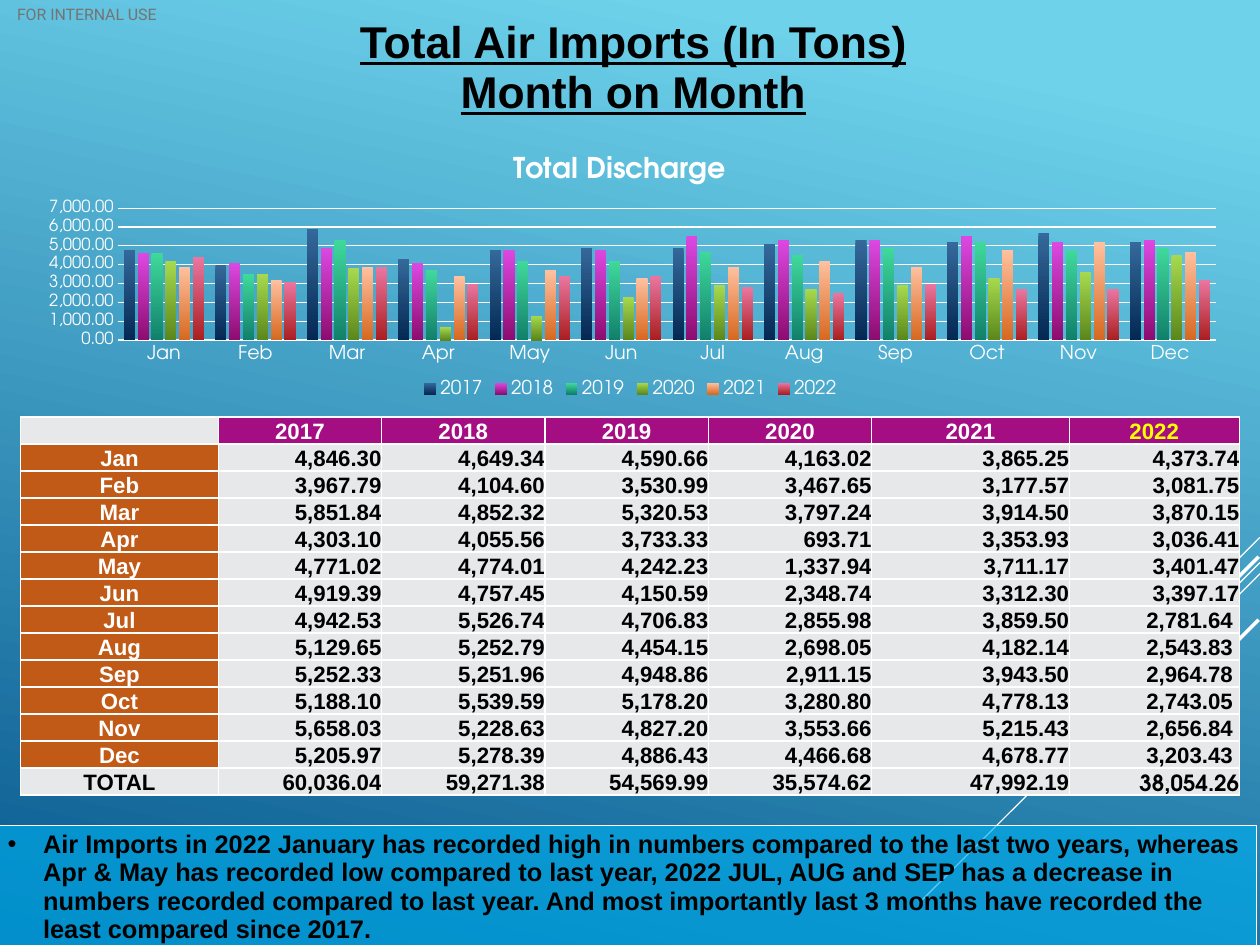
from dataclasses import dataclass
from typing import Any

from lxml.etree import SubElement
from pptx import Presentation
from pptx.chart.data import CategoryChartData
from pptx.dml.color import RGBColor
from pptx.enum.chart import XL_CHART_TYPE, XL_LEGEND_POSITION, XL_TICK_MARK
from pptx.enum.shapes import MSO_CONNECTOR, MSO_SHAPE
from pptx.enum.text import MSO_ANCHOR, MSO_AUTO_SIZE, PP_ALIGN
from pptx.oxml.ns import qn
from pptx.util import Cm, Pt

WHITE, BLACK, GREY = "FFFFFF", "000000", "E7E8EA"
MAGENTA, ORANGE, YELLOW = "A50E82", "C15A16", "FFFF00"
ADVENTOR = "TeX Gyre Adventor"
LEFT, WIDTH = 0.46, 27.1  # shared by the chart and the table
COLUMN_WIDTHS = (4.39, 3.63, 3.63, 3.63, 3.63, 4.39, 3.78)
ROW_HEIGHT = 0.6
NO_MARGINS = dict.fromkeys(("margin_left", "margin_top", "margin_right", "margin_bottom"), 0)


@dataclass(frozen=True)
class TextStyle:
    size: float
    color: str = BLACK
    name: str = "Arial"
    bold: bool = True
    underline: bool = False
    align: Any = PP_ALIGN.CENTER


@dataclass(frozen=True)
class Ray:
    x1: float
    y1: float
    x2: float
    y2: float
    weight: float


@dataclass(frozen=True)
class Year:
    name: str
    top: str
    bottom: str


RAYS = (
    Ray(28, 11.94, 25.68, 14.25, 0.75),
    Ray(28, 12.5, 20.42, 20.07, 0.75),
    Ray(28, 12.75, 23.19, 17.55, 0.75),
    Ray(27.97, 12.37, 23.57, 16.79, 2.25),
    Ray(27.97, 13.77, 24.77, 16.97, 2.25),
)
YEARS = (
    Year("2017", "35699B", "042853"),
    Year("2018", "DC48E1", "8D0C6F"),
    Year("2019", "3FD99B", "11806A"),
    Year("2020", "A6D94E", "5B871B"),
    Year("2021", "FFC1A0", "D7681F"),
    Year("2022", "EA76A0", "AA1E1F"),
)
TONS = {
    "Jan": ("4,846.30", "4,649.34", "4,590.66", "4,163.02", "3,865.25", "4,373.74"),
    "Feb": ("3,967.79", "4,104.60", "3,530.99", "3,467.65", "3,177.57", "3,081.75"),
    "Mar": ("5,851.84", "4,852.32", "5,320.53", "3,797.24", "3,914.50", "3,870.15"),
    "Apr": ("4,303.10", "4,055.56", "3,733.33", "693.71", "3,353.93", "3,036.41"),
    "May": ("4,771.02", "4,774.01", "4,242.23", "1,337.94", "3,711.17", "3,401.47"),
    "Jun": ("4,919.39", "4,757.45", "4,150.59", "2,348.74", "3,312.30", "3,397.17"),
    "Jul": ("4,942.53", "5,526.74", "4,706.83", "2,855.98", "3,859.50", "2,781.64"),
    "Aug": ("5,129.65", "5,252.79", "4,454.15", "2,698.05", "4,182.14", "2,543.83"),
    "Sep": ("5,252.33", "5,251.96", "4,948.86", "2,911.15", "3,943.50", "2,964.78"),
    "Oct": ("5,188.10", "5,539.59", "5,178.20", "3,280.80", "4,778.13", "2,743.05"),
    "Nov": ("5,658.03", "5,228.63", "4,827.20", "3,553.66", "5,215.43", "2,656.84"),
    "Dec": ("5,205.97", "5,278.39", "4,886.43", "4,466.68", "4,678.77", "3,203.43"),
}
TOTALS = ("60,036.04", "59,271.38", "54,569.99", "35,574.62", "47,992.19", "38,054.26")
INDENTED_MONTHS = ("Jul", "Aug", "Sep", "Oct", "Nov", "Dec")
FINDINGS = (
    "Air Imports in 2022 January has recorded high in numbers compared to the last two years, "
    "whereas Apr & May has recorded low compared to last year, 2022 JUL, AUG and SEP has a "
    "decrease in numbers recorded compared to last year. And most importantly last 3 months "
    "have recorded the least compared since 2017."
)


def rgb(value: str) -> RGBColor:
    return RGBColor.from_string(value)


def apply(target: Any, values: dict[str, Any]) -> None:
    for key, value in values.items():
        setattr(target, key, value)


def set_font(font: Any, style: TextStyle) -> None:
    apply(font, {"size": Pt(style.size), "name": style.name,
                 "bold": style.bold, "underline": style.underline})
    font.color.rgb = rgb(style.color)


def write(paragraph: Any, text: str, style: TextStyle) -> None:
    apply(paragraph, {"alignment": style.align, "line_spacing": 0.93})
    run = paragraph.add_run()
    run.text = text
    set_font(run.font, style)


def set_solid(fill: Any, color: str) -> None:
    fill.solid()
    fill.fore_color.rgb = rgb(color)


def set_line(line: Any, color: str, weight: float) -> None:
    set_solid(line.fill, color)
    line.width = Pt(weight)


def set_gradient(fill: Any, start: str, end: str, angle: float, offset: float = 0) -> None:
    fill.gradient()
    fill.gradient_angle = 360 - angle
    for stop, color, position in zip(fill.gradient_stops, (start, end), (offset, 1)):
        stop.color.rgb = rgb(color)
        stop.position = position


def place_in_chart(part: Any, index: int, **fractions: float) -> None:
    for old in part.findall(qn("c:layout")):
        part.remove(old)
    layout = SubElement(part, qn("c:layout"))
    part.insert(index, layout)
    manual = SubElement(layout, qn("c:manualLayout"))
    if "w" in fractions:
        SubElement(manual, qn("c:layoutTarget"), val="inner")
    for axis in "xy":
        SubElement(manual, qn(f"c:{axis}Mode"), val="edge")
    for key, value in fractions.items():
        SubElement(manual, qn(f"c:{key}"), val=str(value))


def draw_ray(slide: Any, ray: Ray) -> None:
    line = slide.shapes.add_connector(
        MSO_CONNECTOR.STRAIGHT, Cm(ray.x1), Cm(ray.y1), Cm(ray.x2), Cm(ray.y2))
    set_line(line.line, WHITE, ray.weight)
    SubElement(line.element.spPr, qn("a:effectLst"))


def draw_title(slide: Any) -> None:
    title = slide.shapes.title
    apply(title, {"left": Cm(1.47), "top": Cm(0.64), "width": Cm(25.2), "height": Cm(1.7)})
    frame = title.text_frame
    apply(frame, NO_MARGINS | {"margin_top": Cm(0.08), "word_wrap": True,
                               "auto_size": MSO_AUTO_SIZE.NONE,
                               "vertical_anchor": MSO_ANCHOR.MIDDLE})
    style = TextStyle(28, underline=True)
    write(frame.paragraphs[0], "Total Air Imports (In Tons)", style)
    write(frame.add_paragraph(), "Month on Month", style)


def draw_marking(slide: Any) -> None:
    frame = slide.shapes.add_textbox(0, 0, Cm(3.86), Cm(0.66)).text_frame
    apply(frame, NO_MARGINS | {"word_wrap": True, "vertical_anchor": MSO_ANCHOR.MIDDLE})
    write(frame.paragraphs[0], "FOR INTERNAL USE", TextStyle(10, "747474", "Roboto", False))


def draw_findings(slide: Any) -> None:
    panel = slide.shapes.add_shape(
        MSO_SHAPE.RECTANGLE, Cm(-0.08), Cm(18.34), Cm(28), Cm(2.67))
    panel.shadow.inherit = False
    set_solid(panel.fill, "00B0F0")
    SubElement(panel.element.xpath("p:spPr/a:solidFill/a:srgbClr")[0], qn("a:alpha"), val="63000")
    set_line(panel.line, WHITE, 0.75)
    apply(panel.text_frame, {"word_wrap": True, "vertical_anchor": MSO_ANCHOR.TOP})
    paragraph = panel.text_frame.paragraphs[0]
    write(paragraph, FINDINGS, TextStyle(16, align=PP_ALIGN.LEFT))
    properties = paragraph._p.get_or_add_pPr()
    apply_indent = {"marL": Cm(0.79), "indent": Cm(-0.79)}
    for key, value in apply_indent.items():
        properties.set(key, str(int(value)))
    SubElement(SubElement(properties, qn("a:buClr")), qn("a:srgbClr"), val=BLACK)
    SubElement(properties, qn("a:buFont"), typeface="Arial")
    SubElement(properties, qn("a:buChar"), char="•")


def fill_cell(cell: Any, text: str, fill: str, style: TextStyle, right: float = 0) -> None:
    apply(cell, NO_MARGINS | {"margin_right": Cm(right), "vertical_anchor": MSO_ANCHOR.BOTTOM})
    paragraph = cell.text_frame.paragraphs[0]
    if text:
        write(paragraph, text, style)
    else:
        paragraph._p.get_or_add_endParaRPr().set("sz", str(style.size * 100))
    properties = cell._tc.get_or_add_tcPr()
    for side in ("lnL", "lnR", "lnT", "lnB"):
        border = SubElement(properties, qn(f"a:{side}"), w=str(int(Pt(1))))
        SubElement(SubElement(border, qn("a:solidFill")), qn("a:srgbClr"), val=WHITE)
    set_solid(cell.fill, fill)


def draw_table(slide: Any) -> None:
    rows = [("", *(year.name for year in YEARS)),
            *((month, *tons) for month, tons in TONS.items()), ("TOTAL", *TOTALS)]
    table = slide.shapes.add_table(len(rows), len(COLUMN_WIDTHS), Cm(LEFT), Cm(9.27),
                                   Cm(WIDTH), Cm(ROW_HEIGHT * len(rows))).table
    apply(table, {"first_row": False, "horz_banding": False})
    for column, width in zip(table.columns, COLUMN_WIDTHS):
        column.width = Cm(width)
    for r, row in enumerate(rows):
        table.rows[r].height = Cm(ROW_HEIGHT)
        for c, text in enumerate(row):
            last = c == len(row) - 1
            fill, style, right = GREY, TextStyle(14, align=PP_ALIGN.RIGHT), 0
            if r == 0 and c > 0:
                fill, style = MAGENTA, TextStyle(14, YELLOW if last else WHITE)
            elif c == 0:
                in_month = row[0] in TONS
                fill, style = (ORANGE, TextStyle(14, WHITE)) if in_month else (GREY, TextStyle(14))
            elif last and row[0] == "TOTAL":
                style = TextStyle(14, name=ADVENTOR, align=PP_ALIGN.RIGHT)
            elif last and row[0] in INDENTED_MONTHS:
                right = 0.14
            fill_cell(table.cell(r, c), text, fill, style, right)


def draw_chart(slide: Any) -> None:
    data = CategoryChartData(number_format="#,##0.00")
    data.categories = list(TONS)
    for year, tons in zip(YEARS, zip(*TONS.values())):
        data.add_series(year.name, [round(float(t.replace(",", "")), -2) for t in tons])
    chart = slide.shapes.add_chart(XL_CHART_TYPE.COLUMN_CLUSTERED, Cm(LEFT), Cm(2.95),
                                   Cm(WIDTH), Cm(5.99), data).chart
    label = TextStyle(12, WHITE, ADVENTOR, False)
    set_font(chart.font, TextStyle(10, WHITE, ADVENTOR, False))
    # Title and legend
    chart.has_title = True
    write(chart.chart_title.text_frame.paragraphs[0], "Total Discharge",
          TextStyle(18, WHITE, ADVENTOR))
    chart.has_legend = True
    apply(chart.legend, {"position": XL_LEGEND_POSITION.BOTTOM, "include_in_layout": False})
    set_font(chart.legend.font, label)
    # Columns
    plot = chart.plots[0]
    apply(plot, {"gap_width": 100, "overlap": -24, "vary_by_categories": False})
    for series, year in zip(plot.series, YEARS):
        set_gradient(series.format.fill, year.top, year.bottom, 90)
    # Axes
    months, tonnage = chart.category_axis, chart.value_axis
    apply(tonnage, {"minimum_scale": 0, "maximum_scale": 7000, "major_unit": 1000})
    for axis, style in ((months, label), (tonnage, TextStyle(10.5, WHITE, ADVENTOR, False))):
        apply(axis, {"major_tick_mark": XL_TICK_MARK.NONE, "minor_tick_mark": XL_TICK_MARK.NONE})
        set_font(axis.tick_labels.font, style)
    apply(tonnage.tick_labels, {"number_format": "#,##0.00", "number_format_is_linked": False})
    set_line(months.format.line, WHITE, 1)
    tonnage.format.line.fill.background()
    set_line(tonnage.major_gridlines.format.line, WHITE, 0.75)
    # Positions inside the chart
    place_in_chart(chart.element.xpath("c:chart/c:title")[0], 1, x=0.4, y=0.06)
    place_in_chart(chart.element.xpath("c:chart/c:plotArea")[0], 0, x=0.08, y=0.28, w=0.9, h=0.49)


def main() -> None:
    deck = Presentation()
    apply(deck, {"slide_width": Cm(28), "slide_height": Cm(21)})
    slide = deck.slides.add_slide(deck.slide_layouts[5])
    set_gradient(slide.background.fill, "6ED2EB", "06588E", 102, 0.1)
    for ray in RAYS:
        draw_ray(slide, ray)
    for draw in (draw_marking, draw_title, draw_findings, draw_table, draw_chart):
        draw(slide)
    deck.save("out.pptx")


if __name__ == "__main__":
    main()
